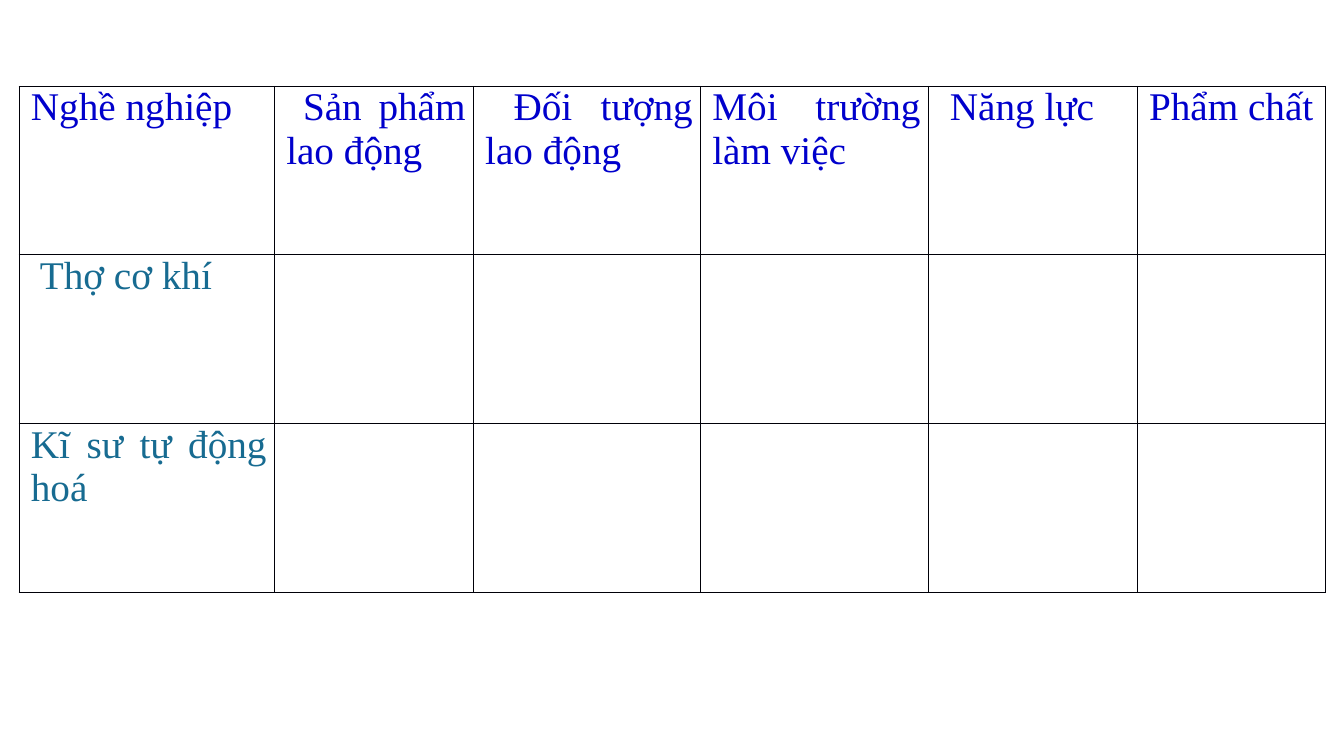
from lxml.etree import SubElement
from pptx import Presentation
from pptx.dml.color import RGBColor
from pptx.enum.text import MSO_ANCHOR, PP_ALIGN
from pptx.oxml.ns import qn
from pptx.util import Inches, Pt

HEADER_BLUE = RGBColor(0x00, 0x00, 0xCC)
JOB_TEAL = RGBColor(0x17, 0x6B, 0x91)
BORDER = RGBColor(0x00, 0x00, 0x08)

COLUMN_WIDTHS = [3.8, 2.96, 3.38, 3.39, 3.11, 2.81]
ROW_HEIGHT = 2.51
HEADERS = ["Nghề nghiệp", " Sản phẩm lao động", " Đối tượng lao động",
           "Môi trường làm việc", " Năng lực", "Phẩm chất"]
JOBS = [" Thợ cơ khí", "Kĩ sư tự động hoá"]


def write_cell(cell, text, color, size=42, font="Times New Roman", indent=0.07):
    para = cell.text_frame.paragraphs[0]
    para.alignment = PP_ALIGN.JUSTIFY
    para._p.get_or_add_pPr().set("marL", str(Inches(indent)))
    span = para.add_run()
    span.text = text
    span.font.size = Pt(size)
    span.font.name = font
    span.font.color.rgb = color


def set_borders(cell, left, right, top, bottom):
    """Draw the four cell borders, with widths in points."""
    properties = cell._tc.get_or_add_tcPr()
    widths = {"a:lnL": left, "a:lnR": right, "a:lnT": top, "a:lnB": bottom}
    for tag, width in widths.items():
        line = SubElement(properties, qn(tag), w=str(Pt(width)))
        fill = SubElement(line, qn("a:solidFill"))
        SubElement(fill, qn("a:srgbClr"), val=str(BORDER))


def format_cell(cell, first_column):
    cell.margin_left = cell.margin_right = Inches(0.11)
    cell.margin_top = cell.margin_bottom = Inches(0)
    cell.vertical_anchor = MSO_ANCHOR.TOP
    set_borders(cell, 0.5 if first_column else 1, 1, 0.5, 0.5)
    cell.fill.background()


def add_job_table(page, left, top):
    rows = len(JOBS) + 1
    frame = page.shapes.add_table(
        rows, len(HEADERS), Inches(left), Inches(top),
        Inches(sum(COLUMN_WIDTHS)), Inches(ROW_HEIGHT * rows))
    table = frame.table
    table.first_row = table.horz_banding = False
    for column, width in zip(table.columns, COLUMN_WIDTHS):
        column.width = Inches(width)
    for row in table.rows:
        row.height = Inches(ROW_HEIGHT)
        for index, cell in enumerate(row.cells):
            format_cell(cell, index == 0)
    for index, header in enumerate(HEADERS):
        write_cell(table.cell(0, index), header, HEADER_BLUE)
    for index, job in enumerate(JOBS, start=1):
        write_cell(table.cell(index, 0), job, JOB_TEAL)


def main():
    deck = Presentation()
    deck.slide_width = Inches(20)
    deck.slide_height = Inches(11.25)
    page = deck.slides.add_slide(deck.slide_layouts[6])
    add_job_table(page, 0.28, 1.28)
    deck.save("out.pptx")


if __name__ == "__main__":
    main()
